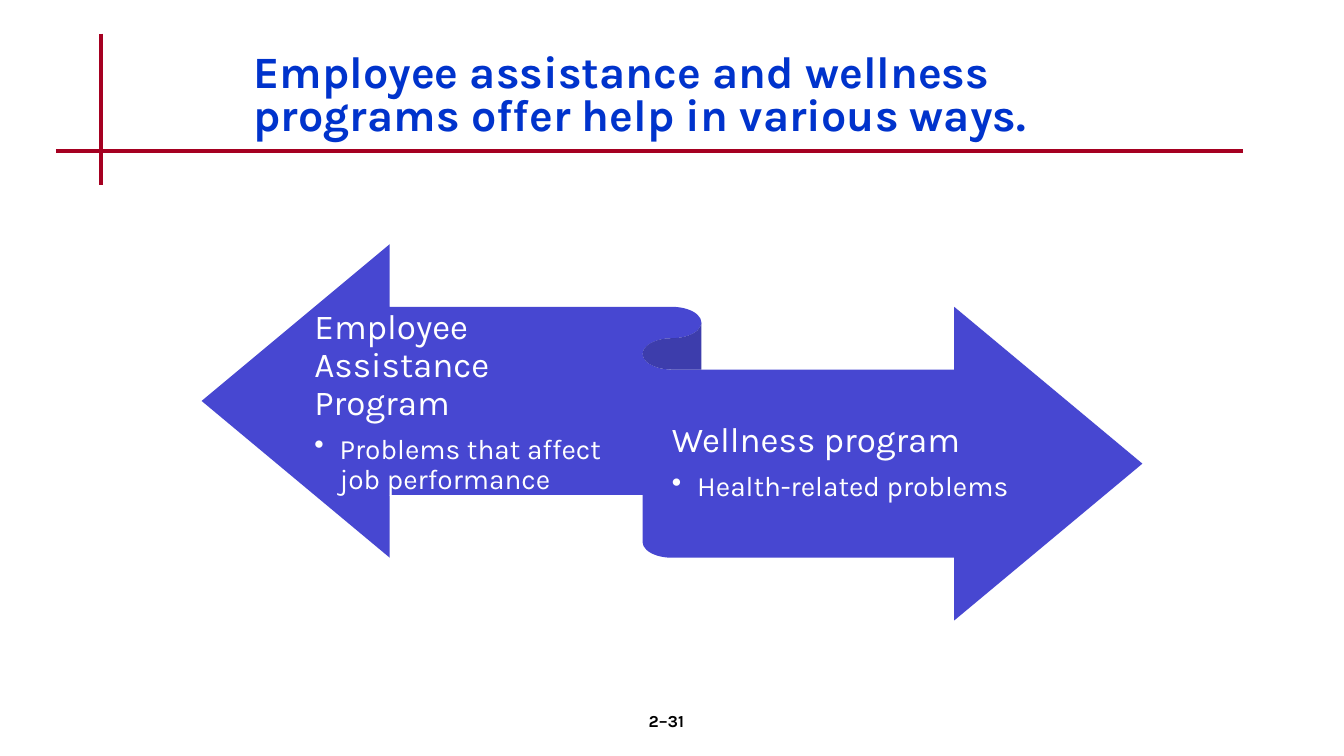
from dataclasses import dataclass

from lxml.etree import SubElement
from pptx import Presentation
from pptx.dml.color import RGBColor
from pptx.enum.shapes import MSO_CONNECTOR, MSO_SHAPE
from pptx.enum.text import MSO_ANCHOR, PP_ALIGN
from pptx.oxml.ns import qn
from pptx.util import Pt


@dataclass(frozen=True)
class Theme:
    font: str = "Karla"
    rule: RGBColor = RGBColor(0xA5, 0x00, 0x21)
    ribbon: RGBColor = RGBColor(0x33, 0x33, 0xCC)
    title: RGBColor = RGBColor(0x00, 0x33, 0xCC)
    light: RGBColor = RGBColor(0xFF, 0xFF, 0xFF)
    dark: RGBColor = RGBColor(0x00, 0x00, 0x00)
    title_size: int = 32
    heading_size: int = 25
    bullet_size: int = 20
    number_size: int = 12


THEME = Theme()


def add_rule(s, x1, y1, x2, y2):
    line = s.shapes.add_connector(MSO_CONNECTOR.STRAIGHT, Pt(x1), Pt(y1), Pt(x2), Pt(y2))
    line.line.color.rgb = THEME.rule
    line.line.width = Pt(3)
    SubElement(line._element.spPr, qn("a:effectLst"))


def add_ribbon(s, x, y, w, h):
    sp = s.shapes.add_shape(MSO_SHAPE.LEFT_RIGHT_RIBBON, Pt(x), Pt(y), Pt(w), Pt(h))
    sp.shadow.inherit = False
    sp.fill.solid()
    sp.fill.fore_color.rgb = THEME.ribbon
    color = sp._element.spPr.find(qn("a:solidFill"))[0]
    SubElement(color, qn("a:alpha"), val="90000")
    sp.line.fill.background()


def add_text_frame(s, x, y, w, h, anchor=MSO_ANCHOR.MIDDLE, side_inset=7.2):
    tf = s.shapes.add_textbox(Pt(x), Pt(y), Pt(w), Pt(h)).text_frame
    tf.word_wrap = True
    tf.vertical_anchor = anchor
    tf.margin_left = tf.margin_right = Pt(side_inset)
    tf.margin_top = tf.margin_bottom = Pt(7.2 if side_inset == 0 else 3.6)
    return tf


def add_run(p, text, size, color, bold=False):
    r = p.add_run()
    r.text = text
    r.font.name = THEME.font
    r.font.size = Pt(size)
    r.font.color.rgb = color
    r.font.bold = bold


def add_bullet(p):
    pPr = p._p.get_or_add_pPr()
    pPr.set("marL", str(Pt(18)))
    pPr.set("indent", str(-Pt(18)))
    SubElement(pPr, qn("a:buChar"), char="•")


def add_program(s, x, y, w, h, heading, problem):
    """Heading with one bullet, set over one half of the ribbon."""
    tf = add_text_frame(s, x, y, w, h, side_inset=0)
    p = tf.paragraphs[0]
    p.line_spacing = 0.9
    p.space_after = Pt(8.75)
    add_run(p, heading, THEME.heading_size, THEME.light)
    p = tf.add_paragraph()
    p.level = 1
    p.line_spacing = 0.9
    p.space_after = Pt(3)
    add_bullet(p)
    add_run(p, problem, THEME.bullet_size, THEME.light)


def add_title(s, text):
    p = add_text_frame(s, 174, 24, 654, 90).paragraphs[0]
    p.line_spacing = 0.8
    add_run(p, text, THEME.title_size, THEME.title, bold=True)


def add_page_number(s, text):
    p = add_text_frame(s, 376, 504, 200, 36, MSO_ANCHOR.TOP).paragraphs[0]
    p.alignment = PP_ALIGN.CENTER
    add_run(p, text, THEME.number_size, THEME.dark, bold=True)


def main():
    prs = Presentation()
    prs.slide_width, prs.slide_height = Pt(960), Pt(540)
    s = prs.slides.add_slide(prs.slide_layouts[6])
    add_rule(s, 72, 24, 72, 132)
    add_rule(s, 40, 108, 888, 108)
    add_ribbon(s, 144, 174.4, 672, 268.8)
    add_program(s, 224.6, 221.5, 221.8, 131.7,
                "Employee Assistance Program", "Problems that affect job performance")
    add_program(s, 480, 264.5, 262, 131.7,
                "Wellness program", "Health-related problems")
    add_title(s, "Employee assistance and wellness programs offer help in various ways.")
    add_page_number(s, "2–31")
    prs.save("out.pptx")


if __name__ == "__main__":
    main()
